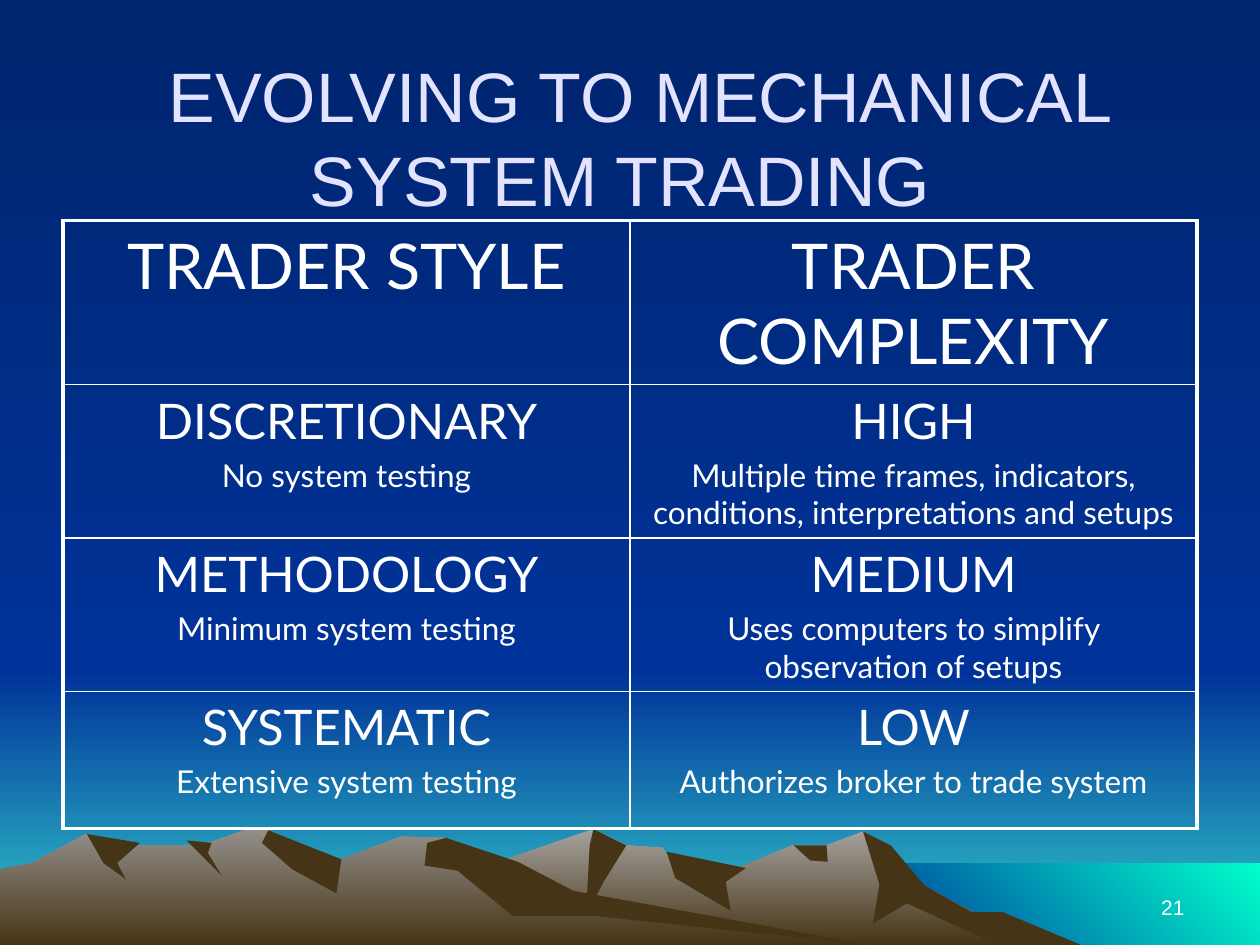
from dataclasses import dataclass
from lxml import etree
from pptx import Presentation
from pptx.dml.color import RGBColor
from pptx.enum.shapes import MSO_SHAPE
from pptx.enum.text import MSO_ANCHOR, MSO_AUTO_SIZE, PP_ALIGN
from pptx.oxml.ns import qn
from pptx.util import Cm, Pt

RECTANGLE = MSO_SHAPE.RECTANGLE
MIDDLE, BOTTOM = MSO_ANCHOR.MIDDLE, MSO_ANCHOR.BOTTOM
CENTER, RIGHT = PP_ALIGN.CENTER, PP_ALIGN.RIGHT
NO_AUTOFIT = MSO_AUTO_SIZE.NONE
DOWNWARD, UP_RIGHT = 270, 45  # gradient directions
LANDSCAPE_UNIT = Cm(2.54) / 100  # outlines are drawn in hundredths of an inch
SLIDE_WIDTH, SLIDE_HEIGHT, SKYLINE = 25.4, 19.05, 13.54


@dataclass(frozen=True)
class Theme:
    title_font: str = "Arial"
    table_font: str = "Lato"
    title_size: int = 40
    header_size: int = 36
    style_size: int = 28
    detail_size: int = 18
    number_size: int = 12
    title_color: str = "E3E3FF"
    text_color: str = "FFFFFF"
    sky: tuple = ("00246D", "003399")
    horizon: tuple = ("003399", "33CCCC")
    ocean: tuple = ("003399", "00FFCC")
    far_hill: tuple = ("A5A29F", "463416")
    near_hill: tuple = ("938F8B", "463416")
    shade: tuple = ("463416",)
    outer_border: float = 2.25
    inner_border: float = 1


@dataclass(frozen=True)
class Band:
    """A strip of the landscape that reaches the right edge of the slide."""
    left: float
    top: float
    bottom: float
    colors: tuple
    angle: int = DOWNWARD


@dataclass(frozen=True)
class Outline:
    colors: tuple
    points: tuple


@dataclass(frozen=True)
class Entry:
    heading: str
    detail: str = ""


THEME = Theme()

BANDS = (
    Band(0, SKYLINE, SLIDE_HEIGHT, THEME.horizon),
    Band(0, 0, SKYLINE, THEME.sky),
    Band(17.35, 17.4, SLIDE_HEIGHT, THEME.ocean, UP_RIGHT),
)

# Mountains from back to front, each hill followed by its shaded faces
MOUNTAINS = (
    Outline(THEME.far_hill, (
        (821, 750), (723, 698), (685, 660), (656, 671), (629, 671), (566, 697),
        (536, 690), (526, 673), (497, 671), (471, 658), (405, 681), (258, 750))),
    Outline(THEME.shade, (
        (685, 660), (698, 702), (693, 733), (720, 717), (792, 750), (858, 750),
        (796, 724), (771, 724), (734, 703), (707, 671))),
    Outline(THEME.shade, ((471, 658), (468, 671), (465, 727), (479, 700), (497, 671))),
    Outline(THEME.shade, ((529, 676), (536, 697), (580, 723), (576, 700), (592, 689))),
    Outline(THEME.shade, ((630, 671), (643, 683), (657, 684), (656, 671))),
    Outline(THEME.near_hill, (
        (690, 750), (432, 712), (354, 665), (318, 664), (271, 682), (236, 681), (212, 658),
        (196, 658), (160, 671), (94, 671), (68, 662), (26, 685), (0, 690), (0, 750))),
    Outline(THEME.shade, ((213, 659), (208, 669), (232, 690), (267, 709), (271, 682))),
    Outline(THEME.shade, (
        (354, 665), (339, 669), (337, 687), (363, 691), (407, 727), (472, 727),
        (690, 750), (455, 707), (411, 684))),
    Outline(THEME.shade, ((148, 667), (176, 695), (165, 677), (168, 669))),
    Outline(THEME.shade, ((69, 662), (111, 669), (93, 685), (100, 698), (82, 685))),
)

ROW_HEIGHTS = (3.3, 3.09, 3.09, 2.77)
COLUMN_WIDTH = 11.43
ENTRIES = (
    (Entry("TRADER STYLE"), Entry("TRADER COMPLEXITY")),
    (Entry("DISCRETIONARY", "No system testing"),
     Entry("HIGH", "Multiple time frames, indicators, conditions, interpretations and setups")),
    (Entry("METHODOLOGY", "Minimum system testing"),
     Entry("MEDIUM", "Uses computers to simplify observation of setups")),
    (Entry("SYSTEMATIC", "Extensive system testing"),
     Entry("LOW", "Authorizes broker to trade system")),
)


def paint(fill, colors: tuple, angle: int = DOWNWARD) -> None:
    if len(colors) == 1:
        fill.solid()
        fill.fore_color.rgb = RGBColor.from_string(colors[0])
        return
    fill.gradient()
    fill.gradient_angle = angle
    for stop, color in zip(fill.gradient_stops, colors):
        stop.color.rgb = RGBColor.from_string(color)


def finish(shape, colors: tuple, angle: int = DOWNWARD) -> None:
    paint(shape.fill, colors, angle)
    shape.line.fill.background()
    shape.shadow.inherit = False


def format_paragraph(paragraph, text: str, font: str, size: int, color: str, alignment) -> None:
    paragraph.text = text
    paragraph.alignment = alignment
    paragraph.font.name = font
    paragraph.font.size = Pt(size)
    paragraph.font.color.rgb = RGBColor.from_string(color)


def draw_landscape(slide) -> None:
    paint(slide.background.fill, THEME.sky)
    for band in BANDS:
        shape = slide.shapes.add_shape(
            RECTANGLE, Cm(band.left), Cm(band.top),
            Cm(SLIDE_WIDTH - band.left), Cm(band.bottom - band.top))
        finish(shape, band.colors, band.angle)
    for outline in MOUNTAINS:
        builder = slide.shapes.build_freeform(*outline.points[0], scale=LANDSCAPE_UNIT)
        builder.add_line_segments(outline.points[1:], close=True)
        finish(builder.convert_to_shape(), outline.colors)


def draw_slide_number(slide) -> None:
    box = slide.shapes.add_textbox(Cm(18.21), Cm(17.35), Cm(5.92), Cm(1.32))
    box.text_frame.word_wrap = True
    box.text_frame.vertical_anchor = BOTTOM
    format_paragraph(box.text_frame.paragraphs[0], "21", THEME.title_font,
                     THEME.number_size, THEME.text_color, RIGHT)


def draw_title(slide) -> None:
    title = slide.shapes.title
    title.left, title.top, title.width, title.height = Cm(1.07), Cm(0.84), Cm(22.86), Cm(3.84)
    frame = title.text_frame
    frame.auto_size = NO_AUTOFIT
    frame.vertical_anchor = MIDDLE
    paragraph = frame.paragraphs[0]
    format_paragraph(paragraph, "EVOLVING TO MECHANICAL SYSTEM TRADING", THEME.title_font,
                     THEME.title_size, THEME.title_color, CENTER)
    paragraph._p.get_or_add_pPr().set("indent", str(Pt(22)))
    slide.shapes._spTree.append(title._element)  # in front of the landscape


def set_borders(cell, widths: dict) -> None:
    properties = cell._tc.get_or_add_tcPr()
    for index, (side, width) in enumerate(widths.items()):
        line = etree.Element(qn(f"a:ln{side}"), w=str(Pt(width)))
        solid = etree.SubElement(line, qn("a:solidFill"))
        etree.SubElement(solid, qn("a:srgbClr"), val=THEME.text_color)
        properties.insert(index, line)


def fill_cell(cell, entry: Entry) -> None:
    cell.fill.background()
    heading_size = THEME.style_size if entry.detail else THEME.header_size
    frame = cell.text_frame
    format_paragraph(frame.paragraphs[0], entry.heading, THEME.table_font,
                     heading_size, THEME.text_color, CENTER)
    if entry.detail:
        detail = frame.add_paragraph()
        detail.space_before = Pt(3.6)
        format_paragraph(detail, entry.detail, THEME.table_font,
                         THEME.detail_size, THEME.text_color, CENTER)


def draw_table(slide) -> None:
    row_count, column_count = len(ENTRIES), len(ENTRIES[0])
    table = slide.shapes.add_table(
        row_count, column_count, Cm(1.27), Cm(4.45),
        Cm(COLUMN_WIDTH * column_count), Cm(sum(ROW_HEIGHTS))).table
    table.first_row = table.horz_banding = False
    for row, height in zip(table.rows, ROW_HEIGHTS):
        row.height = Cm(height)
    for r, entries in enumerate(ENTRIES):
        for c, entry in enumerate(entries):
            cell = table.cell(r, c)
            fill_cell(cell, entry)
            on_edge = {"L": c == 0, "R": c == column_count - 1,
                       "T": r == 0, "B": r == row_count - 1}
            set_borders(cell, {side: THEME.outer_border if outer else THEME.inner_border
                               for side, outer in on_edge.items()})


def main() -> None:
    presentation = Presentation()
    presentation.slide_width, presentation.slide_height = Cm(SLIDE_WIDTH), Cm(SLIDE_HEIGHT)
    slide = presentation.slides.add_slide(presentation.slide_layouts[5])
    draw_landscape(slide)
    draw_slide_number(slide)
    draw_title(slide)
    draw_table(slide)
    presentation.save("out.pptx")


if __name__ == "__main__":
    main()
